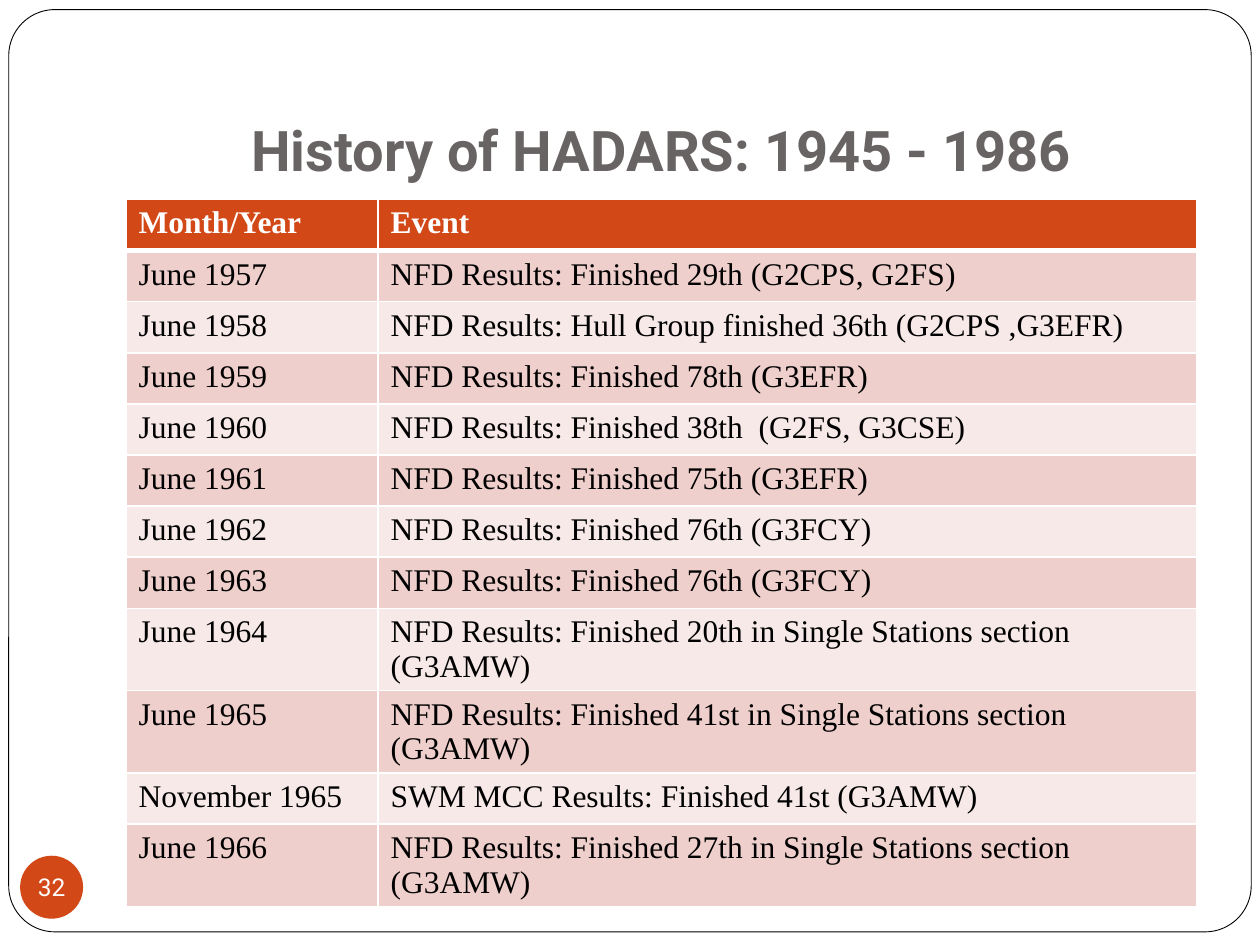
"""Build the club history slide with its table of field day results."""
from dataclasses import dataclass

from lxml import etree
from pptx import Presentation
from pptx.dml.color import RGBColor
from pptx.enum.shapes import MSO_SHAPE
from pptx.enum.text import MSO_ANCHOR, MSO_AUTO_SIZE, PP_ALIGN
from pptx.oxml.ns import qn
from pptx.util import Pt

ROUNDED, OVAL = MSO_SHAPE.ROUNDED_RECTANGLE, MSO_SHAPE.OVAL
MIDDLE, BOTTOM = MSO_ANCHOR.MIDDLE, MSO_ANCHOR.BOTTOM
CENTER = PP_ALIGN.CENTER
NO_AUTOFIT = MSO_AUTO_SIZE.NONE
TITLE_ONLY = 5


@dataclass(frozen=True)
class Theme:
    accent: str = "D34817"
    title: str = "696464"
    text: str = "000000"
    paper: str = "FFFFFF"
    bands: tuple = ("EFCFCC", "F7E9E8")
    heading_font: str = "Roboto"
    table_font: str = "Times New Roman"
    title_size: int = 32
    table_size: int = 18
    number_size: int = 14


HEADINGS = ("Month/Year", "Event")
EVENTS = [
    ("June 1957", "NFD Results: Finished 29th (G2CPS, G2FS)"),
    ("June 1958", "NFD Results: Hull Group finished 36th (G2CPS ,G3EFR)"),
    ("June 1959", "NFD Results: Finished 78th (G3EFR)"),
    ("June 1960", "NFD Results: Finished 38th  (G2FS, G3CSE)"),
    ("June 1961", "NFD Results: Finished 75th (G3EFR)"),
    ("June 1962", "NFD Results: Finished 76th (G3FCY)"),
    ("June 1963", "NFD Results: Finished 76th (G3FCY)"),
    ("June 1964", "NFD Results: Finished 20th in Single Stations section (G3AMW)"),
    ("June 1965", "NFD Results: Finished 41st in Single Stations section (G3AMW)"),
    ("November 1965", "SWM MCC Results: Finished 41st (G3AMW)"),
    ("June 1966", "NFD Results: Finished 27th in Single Stations section (G3AMW)"),
]


class SlideBuilder:
    def __init__(self, slide, theme):
        self.slide = slide
        self.theme = theme

    def set_text(self, text_frame, text, font_name, size, color, bold=False, align=None):
        text_frame.text = text
        paragraph = text_frame.paragraphs[0]
        paragraph.alignment = align
        font = paragraph.font
        font.name, font.size, font.bold = font_name, Pt(size), bold
        font.color.rgb = RGBColor.from_string(color)

    def shape(self, kind, left, top, width, height, fill):
        shape = self.slide.shapes.add_shape(kind, Pt(left), Pt(top), Pt(width), Pt(height))
        shape.shadow.inherit = False
        shape.fill.solid()
        shape.fill.fore_color.rgb = RGBColor.from_string(fill)
        shape.line.fill.background()
        return shape

    def frame(self, left, top, width, height):
        frame = self.shape(ROUNDED, left, top, width, height, self.theme.paper)
        frame.adjustments[0] = 0.05
        frame.line.color.rgb = RGBColor.from_string(self.theme.text)
        frame.line.width = Pt(0.5)
        self.slide.shapes.title.element.addprevious(frame.element)

    def title(self, text, left, top, width, height):
        title = self.slide.shapes.title
        title.left, title.top, title.width, title.height = map(Pt, (left, top, width, height))
        text_frame = title.text_frame
        text_frame.auto_size = NO_AUTOFIT
        text_frame.vertical_anchor = BOTTOM
        text_frame.margin_bottom = Pt(7.2)
        self.set_text(text_frame, text, self.theme.heading_font, self.theme.title_size,
                      self.theme.title, bold=True, align=CENTER)

    def page_number(self, number, left, top, size):
        badge = self.shape(OVAL, left, top, size, size, self.theme.accent)
        text_frame = badge.text_frame
        text_frame.word_wrap = False
        text_frame.vertical_anchor = MIDDLE
        text_frame.margin_left = text_frame.margin_right = 0
        text_frame.margin_top = text_frame.margin_bottom = 0
        self.set_text(text_frame, number, self.theme.heading_font, self.theme.number_size,
                      self.theme.paper, align=CENTER)

    def border(self, cell, side, width):
        properties = cell._tc.get_or_add_tcPr()
        line = etree.SubElement(properties, qn(f"a:ln{side}"), w=str(Pt(width)))
        fill = etree.SubElement(line, qn("a:solidFill"))
        etree.SubElement(fill, qn("a:srgbClr"), val=self.theme.paper)

    def cell(self, cell, text, row_index):
        is_heading = row_index == 0
        for side in "LRTB":
            meets_heading = (row_index, side) in ((0, "B"), (1, "T"))
            self.border(cell, side, 3 if meets_heading else 1)
        cell.fill.solid()
        fill = self.theme.accent if is_heading else self.theme.bands[(row_index - 1) % 2]
        cell.fill.fore_color.rgb = RGBColor.from_string(fill)
        color = self.theme.paper if is_heading else self.theme.text
        self.set_text(cell.text_frame, text, self.theme.table_font, self.theme.table_size,
                      color, bold=is_heading)

    def table(self, rows, left, top, column_widths, row_height):
        table = self.slide.shapes.add_table(
            len(rows), len(column_widths), Pt(left), Pt(top),
            Pt(sum(column_widths)), Pt(row_height * len(rows))).table
        for column, width in zip(table.columns, column_widths):
            column.width = Pt(width)
        for row_index, texts in enumerate(rows):
            table.rows[row_index].height = Pt(row_height)
            for column_index, text in enumerate(texts):
                self.cell(table.cell(row_index, column_index), text, row_index)


def main():
    presentation = Presentation()
    presentation.slide_width, presentation.slide_height = Pt(720), Pt(540)
    slide = presentation.slides.add_slide(presentation.slide_layouts[TITLE_ONLY])
    builder = SlideBuilder(slide, Theme())
    builder.frame(5, 5.5, 710, 527)
    builder.title("History of HADARS: 1945 - 1986", 72, 21.6, 612, 90)
    builder.table([HEADINGS, *EVENTS], 72, 114, (144, 468), 29.2)
    builder.page_number("32", 11.5, 489, 36)
    presentation.save("out.pptx")


if __name__ == "__main__":
    main()
